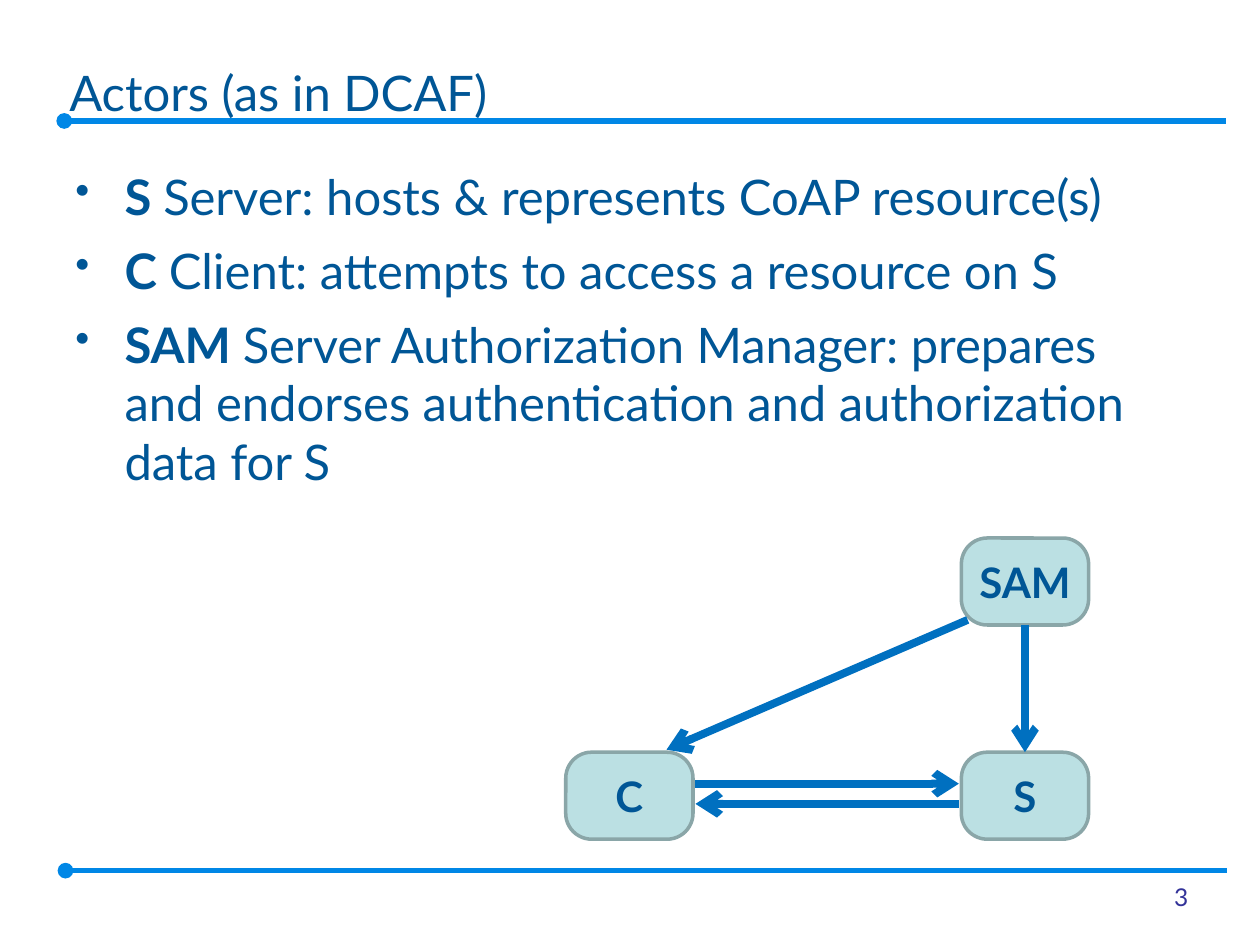
from dataclasses import dataclass

from lxml.etree import SubElement
from pptx import Presentation
from pptx.dml.color import RGBColor
from pptx.enum.shapes import MSO_CONNECTOR, MSO_SHAPE
from pptx.enum.text import MSO_ANCHOR, MSO_AUTO_SIZE, PP_ALIGN
from pptx.oxml.ns import qn
from pptx.util import Inches, Pt


@dataclass(frozen=True)
class Theme:
    font: str = "Lato"
    text: str = "005696"
    page_number: str = "333399"
    rule: str = "0087E6"
    arrow: str = "0070C0"
    actor_fill: str = "BBE0E3"
    actor_line: str = "8AA6A8"
    heading_size: float = 28
    actor_size: float = 24
    page_number_size: float = 14
    rule_width: float = 3
    arrow_width: float = 4.5
    actor_width: float = 2


class SlideBuilder:
    def __init__(self, slide, theme):
        self.slide = slide
        self.theme = theme

    def format_run(self, run, size, color, bold=False):
        run.font.name = self.theme.font
        run.font.size = Pt(size)
        run.font.bold = bold
        run.font.color.rgb = RGBColor.from_string(color)

    def text_box(self, left, top, width, height):
        box = self.slide.shapes.add_textbox(
            Inches(left), Inches(top), Inches(width), Inches(height)
        )
        box.text_frame.word_wrap = True
        return box.text_frame

    def title(self, text, left, top, width, height):
        heading = self.slide.shapes.title
        heading.left, heading.top = Inches(left), Inches(top)
        heading.width, heading.height = Inches(width), Inches(height)
        frame = heading.text_frame
        frame.text = text
        frame.auto_size = MSO_AUTO_SIZE.NONE
        frame.vertical_anchor = MSO_ANCHOR.MIDDLE
        paragraph = frame.paragraphs[0]
        paragraph.alignment = PP_ALIGN.LEFT
        self.format_run(paragraph.runs[0], self.theme.heading_size, self.theme.text)

    def definitions(self, entries, left, top, width, height):
        frame = self.text_box(left, top, width, height)
        for index, (term, meaning) in enumerate(entries):
            paragraph = frame.add_paragraph() if index else frame.paragraphs[0]
            properties = paragraph._p.get_or_add_pPr()
            properties.set("marL", str(Inches(0.39)))
            properties.set("indent", str(Inches(-0.39)))
            SubElement(properties, qn("a:buSzPct"), val="85000")
            SubElement(properties, qn("a:buChar"), char="•")
            paragraph.space_before = Pt(5.6 if index else 0)
            paragraph.space_after = Pt(3)
            for text, bold in ((f"{term} ", True), (meaning, False)):
                run = paragraph.add_run()
                run.text = text
                self.format_run(run, self.theme.heading_size, self.theme.text, bold)

    def page_number(self, text, left, top, width, height):
        frame = self.text_box(left, top, width, height)
        frame.text = text
        paragraph = frame.paragraphs[0]
        paragraph.alignment = PP_ALIGN.RIGHT
        self.format_run(
            paragraph.runs[0], self.theme.page_number_size, self.theme.page_number
        )

    def actor(self, name, left, top, width, height):
        node = self.slide.shapes.add_shape(
            MSO_SHAPE.ROUNDED_RECTANGLE,
            Inches(left), Inches(top), Inches(width), Inches(height),
        )
        node.adjustments[0] = 0.297
        node.shadow.inherit = False
        node.fill.solid()
        node.fill.fore_color.rgb = RGBColor.from_string(self.theme.actor_fill)
        node.line.color.rgb = RGBColor.from_string(self.theme.actor_line)
        node.line.width = Pt(self.theme.actor_width)
        frame = node.text_frame
        frame.margin_left = frame.margin_right = Inches(0.08)
        frame.margin_top = frame.margin_bottom = Inches(0.05)
        frame.vertical_anchor = MSO_ANCHOR.MIDDLE
        frame.text = name
        paragraph = frame.paragraphs[0]
        paragraph.alignment = PP_ALIGN.CENTER
        self.format_run(
            paragraph.runs[0], self.theme.actor_size, self.theme.text, bold=True
        )

    def line(self, start, end, color, width, marker, marker_type):
        connector = self.slide.shapes.add_connector(
            MSO_CONNECTOR.STRAIGHT, *(Inches(value) for value in (*start, *end))
        )
        connector.line.color.rgb = RGBColor.from_string(color)
        connector.line.width = Pt(width)
        SubElement(connector.line._get_or_add_ln(), qn(marker), type=marker_type)
        SubElement(connector._element.spPr, qn("a:effectLst"))

    def rule(self, left, top):
        self.line(
            (left, top), (left + 9.22, top),
            self.theme.rule, self.theme.rule_width, "a:headEnd", "oval",
        )

    def arrow(self, start, end):
        self.line(
            start, end,
            self.theme.arrow, self.theme.arrow_width, "a:tailEnd", "arrow",
        )


def main():
    presentation = Presentation()
    presentation.slide_width, presentation.slide_height = Inches(10), Inches(7.5)
    slide = presentation.slides.add_slide(presentation.slide_layouts[5])
    builder = SlideBuilder(slide, Theme())

    builder.rule(0.51, 0.96)
    builder.rule(0.52, 6.91)
    builder.title("Actors (as in DCAF)", 0.45, 0.32, 6.46, 0.82)
    builder.definitions(
        [
            ("S", "Server: hosts & represents CoAP resource(s)"),
            ("C", "Client: attempts to access a resource on S"),
            (
                "SAM",
                "Server Authorization Manager: prepares and endorses "
                "authentication and authorization data for S",
            ),
        ],
        0.5, 1.27, 9, 2.73,
    )
    builder.page_number("3", 9.03, 6.95, 0.5, 0.4)

    actor_width, actor_height = 1.01, 0.69
    client_left, server_left = 4.49, 7.63
    manager_top, peer_top = 4.27, 5.97
    for name, left, top in (
        ("SAM", server_left, manager_top),
        ("S", server_left, peer_top),
        ("C", client_left, peer_top),
    ):
        builder.actor(name, left, top, actor_width, actor_height)

    server_center = server_left + actor_width / 2
    client_side = client_left + actor_width + 0.02
    server_side = server_left - 0.02
    request_y, response_y = peer_top + 0.25, peer_top + 0.41
    builder.arrow((server_center, manager_top + actor_height), (server_center, peer_top))
    builder.arrow((7.68, 4.92), (5.29, 5.95))
    builder.arrow((client_side, request_y), (server_side, request_y))
    builder.arrow((server_side, response_y), (client_side, response_y))

    presentation.save("out.pptx")


if __name__ == "__main__":
    main()
